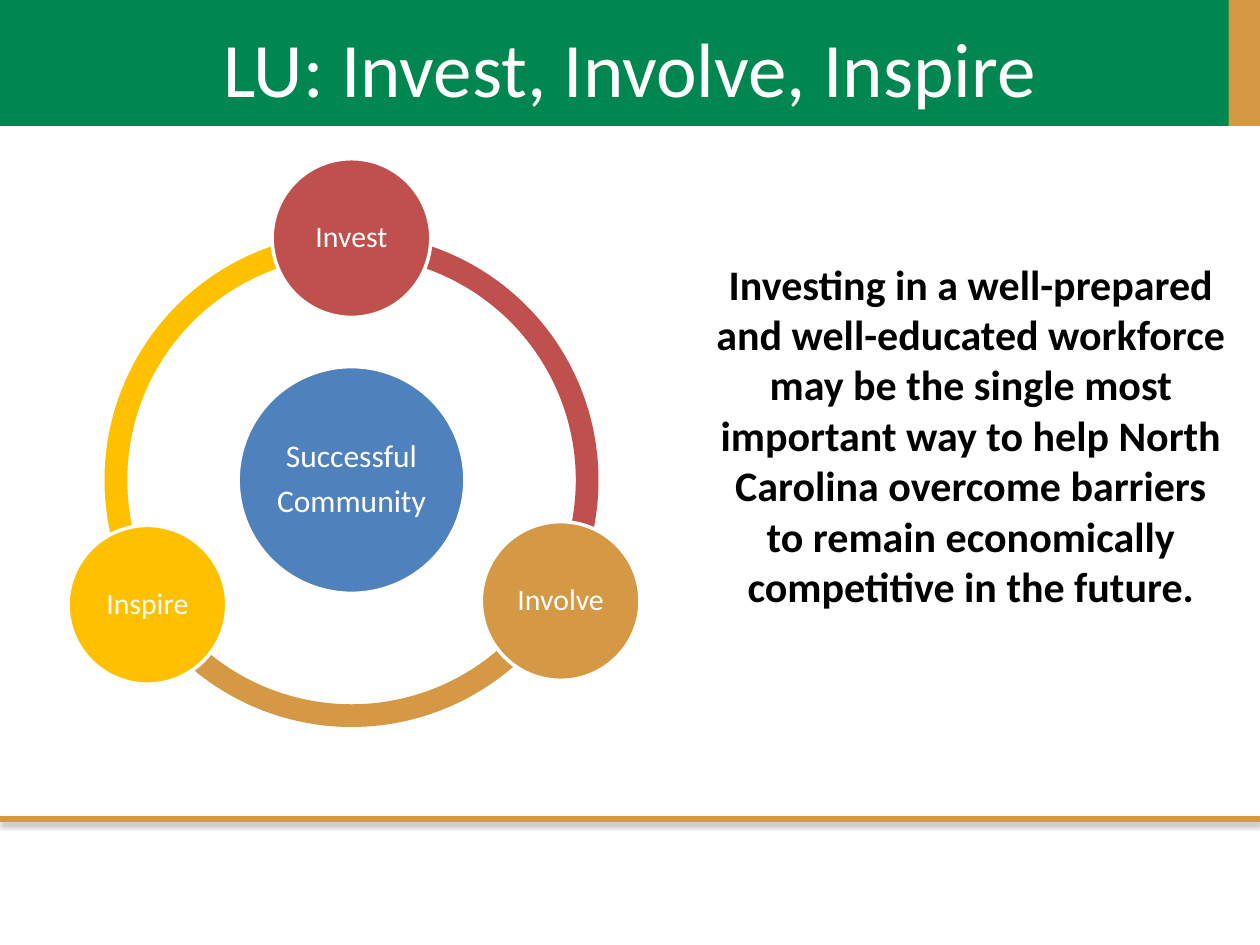
import lxml.etree
import pptx
import pptx.dml.color
import pptx.enum.shapes
import pptx.enum.text
import pptx.oxml.ns
import pptx.util

COLUMNS, ROWS = 10, 7.5
CELL = pptx.util.Inches(1)
FONT = "Calibri"
COLOURS = {
    "green": "008751",
    "gold": "D59844",
    "yellow": "FFC000",
    "red": "C0504D",
    "blue": "4F81BD",
    "white": "FFFFFF",
    "black": "000000",
}
RING_CENTRE = (2.79, 3.81)
RING_SIZE, RING_THICKNESS = 3.92, 0.046
ARCS = [("yellow", 150, 270), ("gold", 30, 150), ("red", 270, 30)]
HUB = ("blue", ["Successful", "Community"], RING_CENTRE, 1.8, 18)
STAGES = [
    ("red", ["Invest"], (2.79, 1.89), 1.26, 17),
    ("gold", ["Involve"], (4.45, 4.77), 1.26, 17),
    ("yellow", ["Inspire"], (1.17, 4.8), 1.26, 17),
]
TITLE = "LU: Invest, Involve, Inspire"
MESSAGE = (
    "Investing in a well-prepared and well-educated workforce may be the single "
    "most important way to help North Carolina overcome barriers to remain "
    "economically competitive in the future."
)


def colour(name):
    """Return the named colour."""
    return pptx.dml.color.RGBColor.from_string(COLOURS[name])


def cells(*lengths):
    """Turn grid cells into slide lengths."""
    return [round(length * CELL) for length in lengths]


def square(centre, size):
    """Return the grid position of a square around a centre."""
    return centre[0] - size / 2, centre[1] - size / 2, size, size


def add_shape(page, kind, place, fill, outline=None):
    """Add a flat filled shape."""
    shape = page.shapes.add_shape(kind, *cells(*place))
    shape.shadow.inherit = False
    shape.fill.solid()
    shape.fill.fore_color.rgb = colour(fill)
    if outline:
        shape.line.color.rgb = colour(outline)
        shape.line.width = pptx.util.Pt(2)
    else:
        shape.line.fill.background()
    return shape


def add_text(page, place, lines, size, ink, bold=False, inset=None,
             anchor="TOP", spacing=None, after=0):
    """Add a box of centred paragraphs."""
    frame = page.shapes.add_textbox(*cells(*place)).text_frame
    frame.word_wrap = True
    frame.vertical_anchor = pptx.enum.text.MSO_ANCHOR[anchor]
    if inset is not None:
        frame.margin_left = frame.margin_right = pptx.util.Inches(inset)
        frame.margin_top = frame.margin_bottom = pptx.util.Inches(inset)
    frame.text = "\n".join(lines)
    for para in frame.paragraphs:
        para.alignment = pptx.enum.text.PP_ALIGN.CENTER
        para.line_spacing = spacing
        para.space_after = pptx.util.Pt(after)
        para.font.name = FONT
        para.font.size = pptx.util.Pt(size)
        para.font.bold = bold
        para.font.color.rgb = colour(ink)


def add_arc(page, fill, start, end):
    """Add one arc of the ring between two clockwise angles."""
    kind = pptx.enum.shapes.MSO_SHAPE.BLOCK_ARC
    arc = add_shape(page, kind, square(RING_CENTRE, RING_SIZE), fill)
    arc.adjustments[0] = start * 0.6
    arc.adjustments[1] = end * 0.6
    arc.adjustments[2] = RING_THICKNESS


def add_circle(page, fill, lines, centre, size, points):
    """Add a circle and its label in the inscribed square."""
    kind = pptx.enum.shapes.MSO_SHAPE.OVAL
    add_shape(page, kind, square(centre, size), fill, "white")
    add_text(page, square(centre, size * 0.71), lines, points, "white",
             inset=0.02, anchor="MIDDLE", spacing=0.9,
             after=points * 0.35 if len(lines) > 1 else 0)


def add_rule(page, row):
    """Add a full-width rule with a soft shadow below it."""
    kind = pptx.enum.shapes.MSO_CONNECTOR.STRAIGHT
    rule = page.shapes.add_connector(kind, *cells(0, row, COLUMNS, row))
    rule.line.color.rgb = colour("gold")
    rule.line.width = pptx.util.Pt(3)
    qn = pptx.oxml.ns.qn
    effects = lxml.etree.SubElement(rule._element.spPr, qn("a:effectLst"))
    shadow = lxml.etree.SubElement(
        effects, qn("a:outerShdw"), blurRad=str(pptx.util.Pt(3.1)),
        dist=str(pptx.util.Pt(1.8)), dir="5400000", rotWithShape="0")
    tint = lxml.etree.SubElement(shadow, qn("a:srgbClr"), val=COLOURS["black"])
    lxml.etree.SubElement(tint, qn("a:alpha"), val="35000")


def main():
    """Build the slide and save it."""
    deck = pptx.Presentation()
    deck.slide_width, deck.slide_height = cells(COLUMNS, ROWS)
    page = deck.slides.add_slide(deck.slide_layouts[6])
    band = pptx.enum.shapes.MSO_SHAPE.RECTANGLE
    add_shape(page, band, (0, 0, COLUMNS, 1), "green")
    add_shape(page, band, (COLUMNS - 0.25, 0, 0.25, 1), "gold")
    add_rule(page, 6.5)
    for arc in ARCS:
        add_arc(page, *arc)
    for circle in [HUB, *STAGES]:
        add_circle(page, *circle)
    add_text(page, (0.5, 0.08, 9, 1.25), [TITLE], 44, "white", inset=0.08)
    add_text(page, (5.58, 2, 4.25, 3.23), [MESSAGE], 24, "black", bold=True)
    deck.save("out.pptx")


if __name__ == "__main__":
    main()
